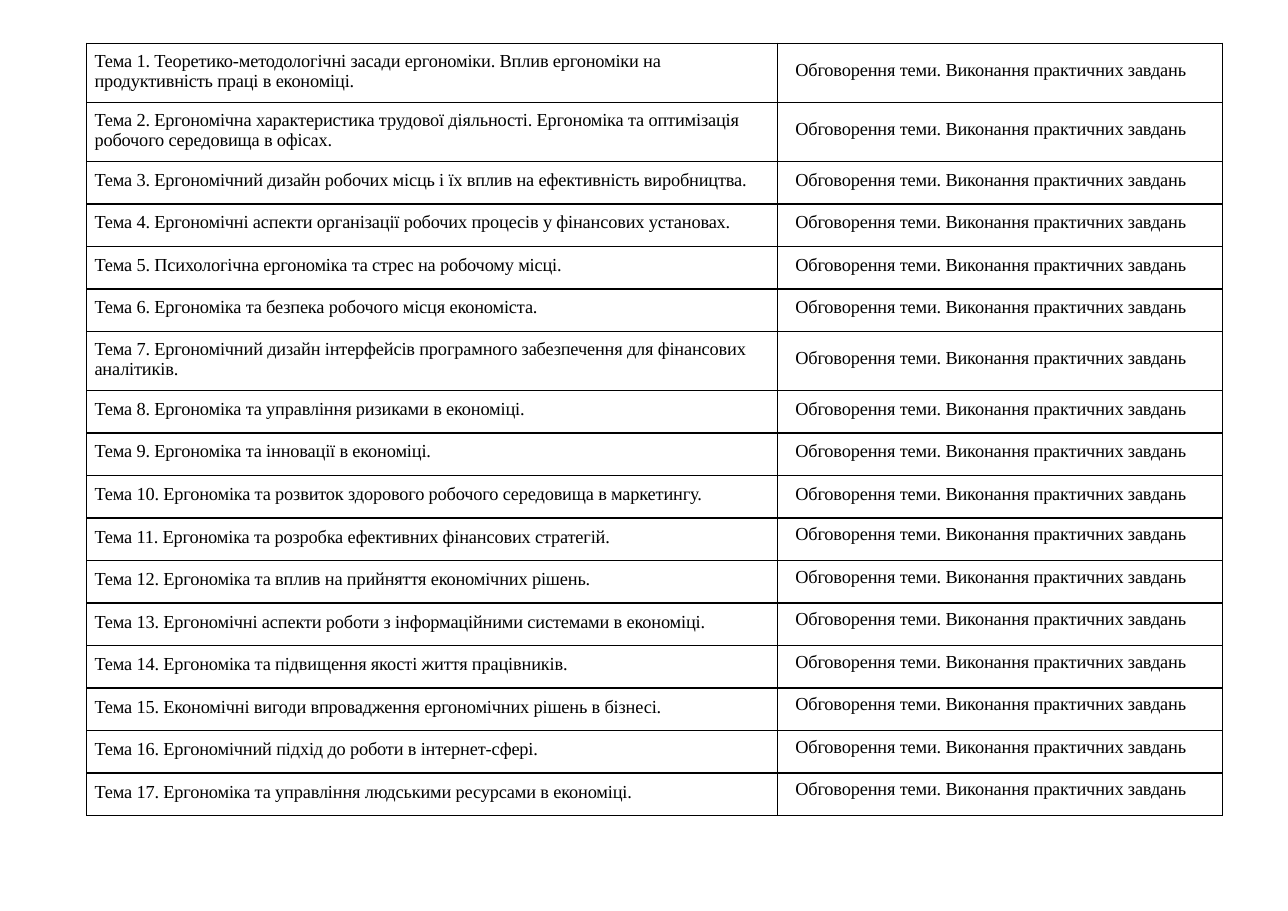
from pptx import Presentation
from pptx.dml.color import RGBColor
from pptx.oxml import parse_xml
from pptx.oxml.ns import nsdecls
from pptx.util import Cm, Pt

TOPICS = [
    "Теоретико-методологічні засади ергономіки. Вплив ергономіки на продуктивність праці в економіці.",
    "Ергономічна характеристика трудової діяльності. Ергономіка та оптимізація робочого середовища в офісах.",
    "Ергономічний дизайн робочих місць і їх вплив на ефективність виробництва.",
    "Ергономічні аспекти організації робочих процесів у фінансових установах.",
    "Психологічна ергономіка та стрес на робочому місці.",
    "Ергономіка та безпека робочого місця економіста.",
    "Ергономічний дизайн інтерфейсів програмного забезпечення для фінансових аналітиків.",
    "Ергономіка та управління ризиками в економіці.",
    "Ергономіка та інновації в економіці.",
    "Ергономіка та розвиток здорового робочого середовища в маркетингу.",
    "Ергономіка та розробка ефективних фінансових стратегій.",
    "Ергономіка та вплив на прийняття економічних рішень.",
    "Ергономічні аспекти роботи з інформаційними системами в економіці.",
    "Ергономіка та підвищення якості життя працівників.",
    "Економічні вигоди впровадження ергономічних рішень в бізнесі.",
    "Ергономічний підхід до роботи в інтернет-сфері.",
    "Ергономіка та управління людськими ресурсами в економіці.",
]
ACTIVITY = "Обговорення теми. Виконання практичних завдань"
TWO_LINE_TOPICS = {1, 2, 7}
FIRST_RAISED_ACTIVITY = 11

SLIDE_SIZE = Cm(29.7), Cm(21)
TABLE_LEFT, TABLE_TOP = Cm(2), Cm(1)
COLUMN_WIDTHS = Cm(15.93), Cm(10.26)
ROW_HEIGHT, TALL_ROW_HEIGHT = Cm(0.98), Cm(1.36)
BLACK = "000000"


def color(value):
    return RGBColor.from_string(value)


def add_borders(cell, width=Pt(1), line_color=BLACK):
    properties = cell._tc.get_or_add_tcPr()
    for position, side in enumerate(("lnL", "lnR", "lnT", "lnB")):
        properties.insert(position, parse_xml(
            f'<a:{side} {nsdecls("a")} w="{width}"><a:solidFill>'
            f'<a:srgbClr val="{line_color}"/></a:solidFill></a:{side}>'))


def write_cell(cell, text, left, top, size=12, font="Times New Roman", tracking=-0.1):
    cell.margin_left, cell.margin_top = left, top
    cell.margin_right = cell.margin_bottom = 0
    cell.fill.background()
    add_borders(cell)
    run = cell.text_frame.paragraphs[0].add_run()
    run.text = text
    run.font.size = Pt(size)
    run.font.name = font
    run.font.color.rgb = color(BLACK)
    run.font._element.set("spc", str(round(tracking * 100)))


def main():
    presentation = Presentation()
    presentation.slide_width, presentation.slide_height = SLIDE_SIZE
    slide = presentation.slides.add_slide(presentation.slide_layouts[6])

    heights = [TALL_ROW_HEIGHT if number in TWO_LINE_TOPICS else ROW_HEIGHT
               for number in range(1, len(TOPICS) + 1)]
    table = slide.shapes.add_table(len(TOPICS), len(COLUMN_WIDTHS), TABLE_LEFT, TABLE_TOP,
                                   sum(COLUMN_WIDTHS), sum(heights)).table
    table.first_row = table.horz_banding = False
    for column, width in zip(table.columns, COLUMN_WIDTHS):
        column.width = width

    for number, (topic, height) in enumerate(zip(TOPICS, heights), start=1):
        row = table.rows[number - 1]
        row.height = height
        if number in TWO_LINE_TOPICS:
            topic_top, activity_top = Cm(0.18), Cm(0.39)
        elif number < FIRST_RAISED_ACTIVITY:
            topic_top, activity_top = Cm(0.2), Cm(0.2)
        else:
            topic_top, activity_top = Cm(0.2), Cm(0.15)
        topic_cell, activity_cell = row.cells
        write_cell(topic_cell, f"Тема {number}. {topic}", Cm(0.18), topic_top)
        write_cell(activity_cell, ACTIVITY, Cm(0.41), activity_top)

    presentation.save("out.pptx")


if __name__ == "__main__":
    main()
